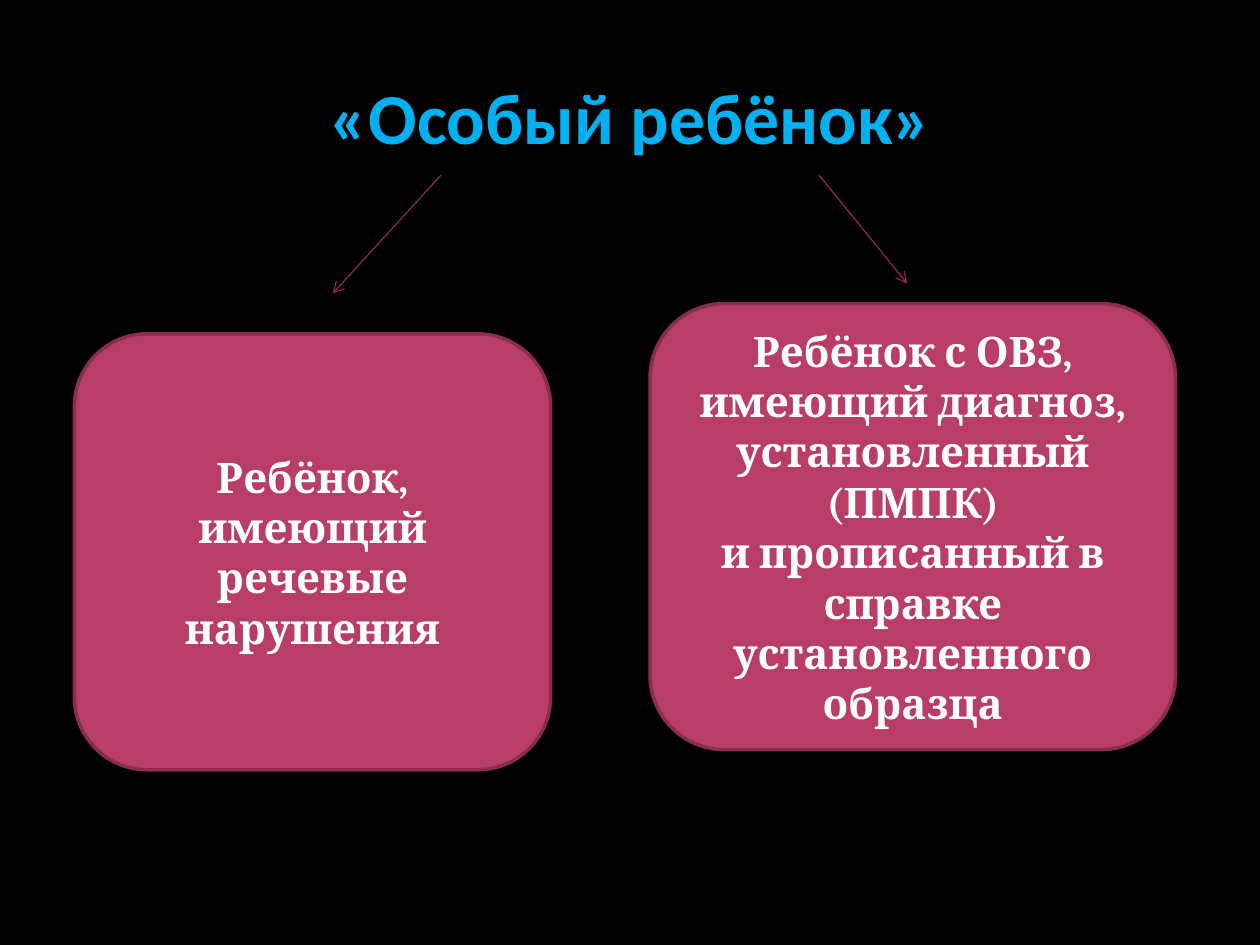
from lxml import etree
from pptx import Presentation
from pptx.dml.color import RGBColor
from pptx.enum.shapes import MSO_CONNECTOR, MSO_SHAPE
from pptx.enum.text import MSO_ANCHOR, PP_ALIGN
from pptx.oxml.ns import qn
from pptx.util import Inches, Pt

BLACK = RGBColor(0x00, 0x00, 0x00)
WHITE = RGBColor(0xFF, 0xFF, 0xFF)
SKY_BLUE = RGBColor(0x00, 0xB0, 0xF0)
RASPBERRY = RGBColor(0xB8, 0x3D, 0x68)
DARK_RASPBERRY = RGBColor(0x88, 0x2D, 0x4D)
ARROW_COLOR = RGBColor(0x8A, 0x28, 0x4A)

# Each category: box (left, top, width, height) and its paragraphs
CATEGORIES = [
    ((0.59, 2.65, 3.78, 3.46), ["Ребёнок, имеющий речевые нарушения"]),
    ((5.16, 2.41, 4.17, 3.54), [
        "Ребёнок с ОВЗ, имеющий диагноз, установленный (ПМПК)",
        "и прописанный в справке установленного образца",
    ]),
]
# Each arrow: start and end points
ARROWS = [((3.5, 1.39), (2.64, 2.33)), ((6.5, 1.39), (7.2, 2.25))]


def format_text(frame, font_name, size, color):
    frame.word_wrap = True
    frame.vertical_anchor = MSO_ANCHOR.MIDDLE
    for para in frame.paragraphs:
        para.alignment = PP_ALIGN.CENTER
        for span in para.runs:
            span.font.name = font_name
            span.font.size = Pt(size)
            span.font.bold = True
            span.font.color.rgb = color


def place(shape, box):
    shape.left, shape.top, shape.width, shape.height = map(Inches, box)


def add_title(slide, box):
    title = slide.shapes.title
    place(title, box)
    title.text_frame.text = "«Особый ребёнок»"
    format_text(title.text_frame, "Calibri", 41, SKY_BLUE)


def add_category(slide, box, lines):
    card = slide.shapes.add_shape(MSO_SHAPE.ROUNDED_RECTANGLE, *map(Inches, box))
    card.shadow.inherit = False
    card.fill.solid()
    card.fill.fore_color.rgb = RASPBERRY
    card.line.color.rgb = DARK_RASPBERRY
    card.line.width = Pt(2)
    card.text_frame.text = "\n".join(lines)
    format_text(card.text_frame, "Cambria", 24, WHITE)


def add_arrow(slide, start, end):
    arrow = slide.shapes.add_connector(
        MSO_CONNECTOR.STRAIGHT, *map(Inches, start + end))
    arrow.line.color.rgb = ARROW_COLOR
    arrow.line.width = Pt(0.75)
    # Open arrowhead at the end, no shadow
    etree.SubElement(arrow.line._get_or_add_ln(), qn("a:tailEnd"), type="arrow")
    etree.SubElement(arrow._element.spPr, qn("a:effectLst"))


def main():
    deck = Presentation()
    deck.slide_width, deck.slide_height = Inches(10), Inches(7.5)
    slide = deck.slides.add_slide(deck.slide_layouts[5])

    # Background
    slide.background.fill.solid()
    slide.background.fill.fore_color.rgb = BLACK

    # Title, the two categories, and the arrows leading to them
    add_title(slide, (0.51, 0.29, 9, 1.25))
    for box, lines in CATEGORIES:
        add_category(slide, box, lines)
    for start, end in ARROWS:
        add_arrow(slide, start, end)

    deck.save("out.pptx")


if __name__ == "__main__":
    main()
